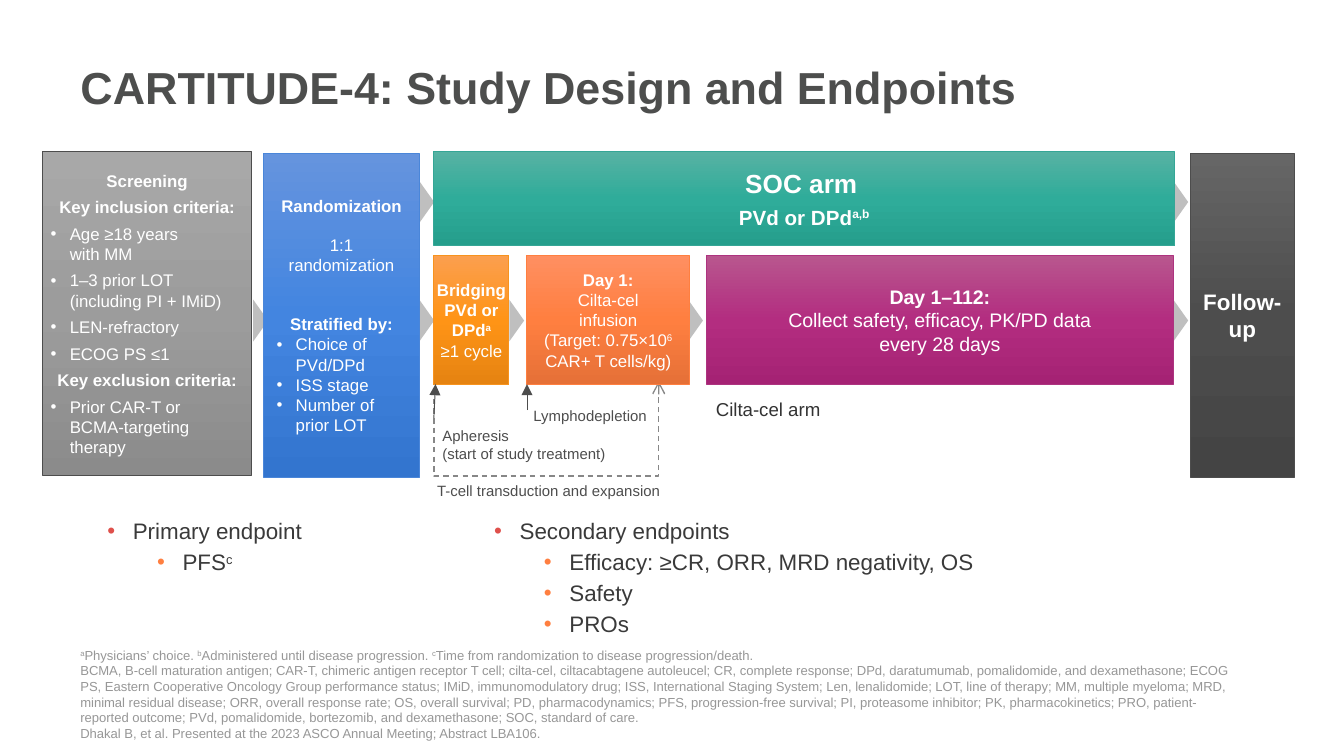
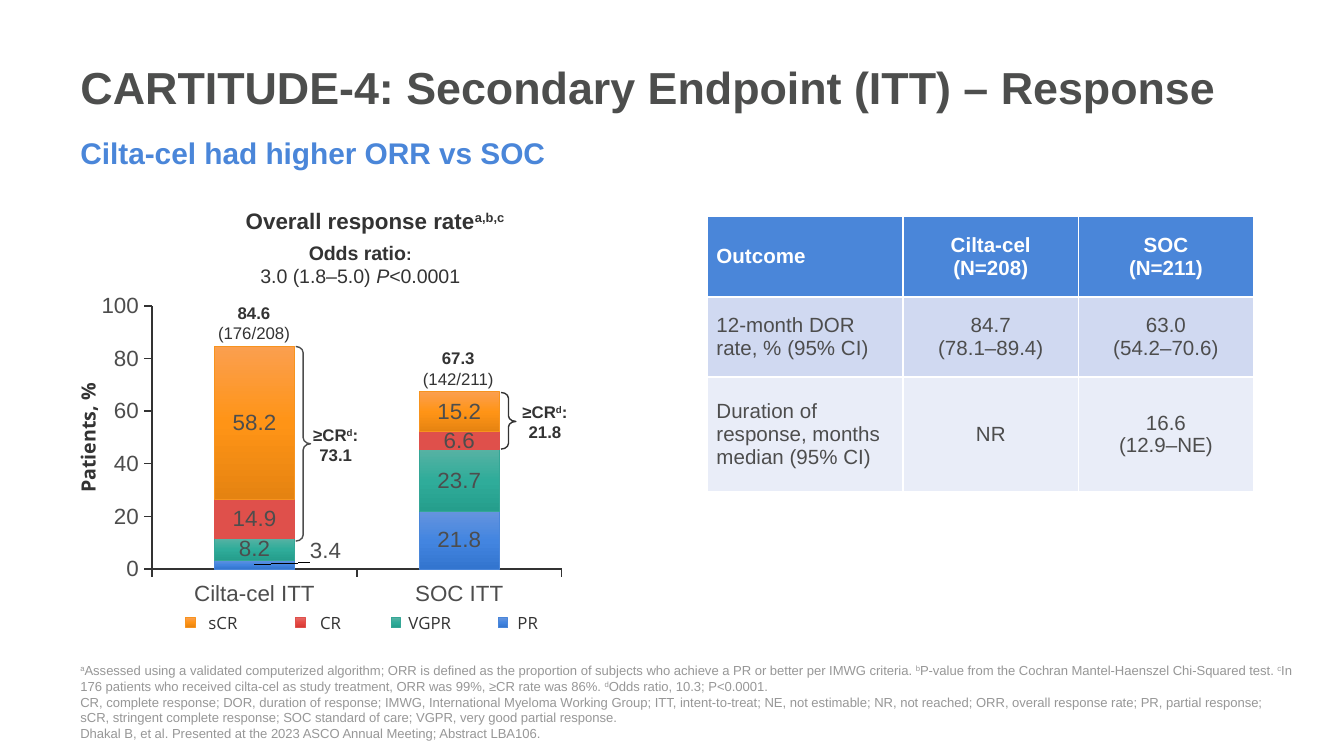
from copy import deepcopy
from lxml import etree
from pptx import Presentation
from pptx import util as u
from pptx.chart import data
from pptx.dml import color
from pptx.enum import chart as charts, dml, shapes, text
from pptx.oxml import ns

COLOURS = {
    "title": "4D4E4D", "slate": "4D4D4D", "ink": "333333", "list": "3A3A3A",
    "note": "979797", "white": "FFFFFF", "arrow": "BFBFBF", "dash": "878787",
    "accent": "4A86D9", "first bullet": "DF504B", "second bullet": "FF7F40",
    "odd row": "D0D9F1", "even row": "E9EDF8",
    "grey": "A8A8A8 9C9C9C 8B8B8B 4D4D4D", "dark": "666666 4D4D4D 444444 4D4D4D",
    "blue": "6594DE 4385E0 3375CF 4A86D9", "green": "57B2A3 2FAC9A 259E8C 35A696",
    "amber": "FB9F4F FF9416 E58311 F7931E", "orange": "FF8F61 FF7F40 E57037 FF7F40",
    "purple": "B8568E B32D80 A52274 AD337F", "red": "E46966 E64944 D53934 DF504B",
    "coral": "DF504B DF504B",
}
RGB = {name: color.RGBColor.from_string(code.split()[0]) for name, code in COLOURS.items()}
CENTER, LEFT = text.PP_ALIGN.CENTER, text.PP_ALIGN.LEFT
TOP, MIDDLE, BOTTOM = text.MSO_ANCHOR.TOP, text.MSO_ANCHOR.MIDDLE, text.MSO_ANCHOR.BOTTOM
TEXT = {"size": 9, "bold": False, "name": "Arial", "colour": "ink", "align": LEFT,
        "anchor": MIDDLE, "insets": (0.25, 0.13, 0.25, 0.13), "before": 0, "after": 0,
        "level": 0, "bullet": None, "mid": ("baseline", "30000")}
FLUSH = (0, 0, 0, 0)


def write(frame, lines, **style):
    base = {**TEXT, **style}
    left, top, right, bottom = map(u.Cm, base["insets"])
    for key, value in {"word_wrap": True, "auto_size": text.MSO_AUTO_SIZE.NONE,
                       "vertical_anchor": base["anchor"], "margin_left": left,
                       "margin_top": top, "margin_right": right,
                       "margin_bottom": bottom}.items():
        setattr(frame, key, value)
    for number, line in enumerate(lines):
        words, change = line if isinstance(line, tuple) else (line, {})
        look = {**base, **change}
        para = frame.add_paragraph() if number else frame.paragraphs[0]
        props = para._p.get_or_add_pPr()
        indent, hang, dot = look["bullet"] or (0, 0, None)
        props.set("marL", str(u.Cm(indent)))
        props.set("indent", str(-u.Cm(hang)))
        if look["bullet"]:
            paint_dot = etree.SubElement(props, ns.qn("a:buClr"))
            etree.SubElement(paint_dot, ns.qn("a:srgbClr"), val=COLOURS[dot])
            etree.SubElement(props, ns.qn("a:buFont"), typeface="Arial")
            etree.SubElement(props, ns.qn("a:buChar"), char="•")
        else:
            etree.SubElement(props, ns.qn("a:buNone"))
        for key, value in {"alignment": look["align"], "level": look["level"],
                           "space_before": u.Pt(look["before"] if number else 0),
                           "space_after": u.Pt(look["after"])}.items():
            setattr(para, key, value)
        for index, piece in enumerate(words.split("^")):
            for row, chunk in enumerate(piece.split("\n") if piece else []):
                if row:
                    para.add_line_break()
                    para._p[-1].append(deepcopy(run._r.rPr))
                run = para.add_run()
                run.text = chunk
                for key, value in {"size": u.Pt(look["size"]), "bold": look["bold"],
                                   "name": look["name"]}.items():
                    setattr(run.font, key, value)
                run.font.color.rgb = RGB[look["colour"]]
                if index % 2:
                    run._r.rPr.set(*look["mid"])


def paint(part, name):
    *stops, edge = COLOURS[name].split()
    fill = part.fill
    if len(stops) == 1:
        fill.solid()
        fill.fore_color.rgb = RGB[name]
    else:
        fill.gradient()
        fill.gradient_angle = 270
        ramp = fill._xPr.find(".//" + ns.qn("a:gsLst"))
        ramp.append(deepcopy(ramp[-1]))
        for stop, position, code in zip(fill.gradient_stops, (0, 0.5, 1), stops):
            stop.position = position
            stop.color.rgb = color.RGBColor.from_string(code)
    part.line.color.rgb = color.RGBColor.from_string(edge)
    part.line.width = u.Pt(0.5)


deck = Presentation()
deck.slide_width, deck.slide_height = u.Cm(25.4), u.Cm(14.29)

SOURCE = "Dhakal B, et al. Presented at the 2023 ASCO Annual Meeting; Abstract LBA106."
pages = []
for layout, title, note_width, notes in (
    (3, "CARTITUDE-4: Study Design and Endpoints", 22.38, [
        "^a^Physicians’ choice. ^b^Administered until disease progression. ^c^Time from randomization to disease progression/death.",
        "BCMA, B-cell maturation antigen; CAR-T, chimeric antigen receptor T cell; cilta-cel, ciltacabtagene autoleucel; CR, complete response; DPd, daratumumab, pomalidomide, and dexamethasone; ECOG PS, Eastern Cooperative Oncology Group performance status; IMiD, immunomodulatory drug; ISS, International Staging System; Len, lenalidomide; LOT, line of therapy; MM, multiple myeloma; MRD, minimal residual disease; ORR, overall response rate; OS, overall survival; PD, pharmacodynamics; PFS, progression-free survival; PI, proteasome inhibitor; PK, pharmacokinetics; PRO, patient-reported outcome; PVd, pomalidomide, bortezomib, and dexamethasone; SOC, standard of care."]),
    (1, "CARTITUDE-4: Secondary Endpoint (ITT) – Response", 23.42, [
        "^a^Assessed using a validated computerized algorithm; ORR is defined as the proportion of subjects who achieve a PR or better per IMWG criteria. ^b^P-value from the Cochran Mantel-Haenszel Chi-Squared test. ^c^In 176 patients who received cilta-cel as study treatment, ORR was 99%, ≥CR rate was 86%. ^d^Odds ratio, 10.3; P<0.0001.",
        "CR, complete response; DOR, duration of response; IMWG, International Myeloma Working Group; ITT, intent-to-treat; NE, not estimable; NR, not reached; ORR, overall response rate; PR, partial response; sCR, stringent complete response; SOC standard of care; VGPR, very good partial response."]),
):
    page = deck.slides.add_slide(deck.slide_layouts[layout])
    heading = page.shapes.title
    for key, value in zip(("left", "top", "width", "height"), (1.27, 0.41, 22.38, 2.46)):
        setattr(heading, key, u.Cm(value))
    write(heading.text_frame, [title], size=24, bold=True, colour="title")
    footnote = page.shapes.add_textbox(*map(u.Cm, (1.27, 13.23, note_width, 0.91)))
    write(footnote.text_frame, notes + [SOURCE], size=7, colour="note", anchor=BOTTOM)
    pages.append(page)
design, response = pages

first = {"size": 12, "colour": "list", "anchor": TOP, "before": 2.2,
         "bullet": (0.48, 0.48, "first bullet")}
second = {"level": 1, "bullet": (1.42, 0.48, "second bullet")}
bodies = (
    (design, 1, (1.78, 9.65, 4.39, 1.35), ["Primary endpoint", ("PFS^c^", second)], first),
    (design, 2, (9.09, 9.65, 11.56, 2.51),
     ["Secondary endpoints", ("Efficacy: ≥CR, ORR, MRD negativity, OS", second),
      ("Safety", second), ("PROs", second)], first),
    (response, 1, (1.27, 2.41, 22.38, 1.12), ["Cilta-cel had higher ORR vs SOC"],
     {"size": 16, "bold": True, "colour": "accent", "anchor": TOP}),
)
for page, slot, place, lines, style in bodies:
    body = page.placeholders[slot]
    for key, value in zip(("left", "top", "width", "height"), place):
        setattr(body, key, u.Cm(value))
    write(body.text_frame, lines, **style)

path_start, *path_turns = [(u.Cm(x), u.Cm(y)) for x, y in
                           ((8.2, 6.63), (8.2, 9), (12.45, 9), (12.45, 7.21))]
builder = design.shapes.build_freeform(*path_start, scale=1.0)
builder.add_line_segments(path_turns, close=False)
expansion = builder.convert_to_shape()
expansion.shadow.inherit = False
expansion.fill.background()
expansion.line.color.rgb = RGB["dash"]
expansion.line.width = u.Pt(0.75)
expansion.line.dash_style = dml.MSO_LINE.DASH
etree.SubElement(expansion._element.find(".//" + ns.qn("a:ln")), ns.qn("a:tailEnd"), type="arrow")

for left, top in ((7.67, 3.68), (21.92, 3.68), (4.53, 5.92), (7.67, 5.92),
                  (9.37, 5.92), (12.75, 5.92), (21.92, 5.92)):
    step = design.shapes.add_shape(shapes.MSO_SHAPE.ISOSCELES_TRIANGLE,
                                   *map(u.Cm, (left, top, 0.79, 0.28)))
    step.rotation = 90
    step.shadow.inherit = False
    step.fill.solid()
    step.fill.fore_color.rgb = RGB["arrow"]
    step.line.fill.background()

strong, plain = {"bold": True}, {"bold": False}
item = {"align": LEFT, "bullet": (0.36, 0.36, "white")}
phases = (
    ((22.5, 2.9, 1.96, 6.12), "dark", [("Follow-up", strong)],
     {"size": 12, "insets": (0.18, 0, 0.18, 0)}),
    ((0.81, 2.87, 3.94, 6.12), "grey",
     [("Screening", strong), ("Key inclusion criteria:", strong),
      ("Age ≥18 years\nwith MM", item), ("1–3 prior LOT (including PI + IMiD)", item),
      ("LEN-refractory", item), ("ECOG PS ≤1", item), ("Key exclusion criteria:", strong),
      ("Prior CAR-T or\nBCMA-targeting therapy", item)],
     {"after": 3.4, "insets": (0.15, 0.08, 0.15, 0.08)}),
    ((4.98, 2.9, 2.95, 6.12), "blue",
     [("Randomization", strong), ("1:1 randomization", {"before": 10.35}),
      ("Stratified by:", {"bold": True, "before": 20.7}),
      ("Choice of PVd/DPd", item), ("ISS stage", item), ("Number of prior LOT", item)], {}),
    ((9.96, 4.83, 3.07, 2.44), "orange",
     [("Day 1:", strong), "Cilta-cel\ninfusion", "(Target: 0.75×10^6^", "CAR+ T cells/kg)"],
     {"insets": FLUSH}),
    ((13.36, 4.83, 8.81, 2.44), "purple",
     [("Day 1–112:", strong), "Collect safety, efficacy, PK/PD data\nevery 28 days"],
     {"size": 10.5, "insets": FLUSH}),
    ((8.2, 4.83, 1.42, 2.44), "amber",
     [("Bridging", strong), ("PVd or DPd^a^", strong), "≥1 cycle"], {"insets": FLUSH}),
    ((8.2, 2.87, 14, 1.78), "green", [("PVd or DPd^a,b^", strong)],
     {"size": 11, "insets": (0.15, 0.76, 0.15, 0.08)}),
)
for place, colour, lines, style in phases:
    phase = design.shapes.add_shape(shapes.MSO_SHAPE.RECTANGLE, *map(u.Cm, place))
    phase.shadow.inherit = False
    paint(phase, colour)
    write(phase.text_frame, lines, colour="white", align=CENTER, **style)

for start, end in (((8.2, 7.9), (8.23, 7.26)), ((9.96, 7.75), (9.96, 7.26))):
    pointer = design.shapes.add_connector(shapes.MSO_CONNECTOR.STRAIGHT,
                                          *map(u.Cm, start + end))
    pointer.line.color.rgb = RGB["slate"]
    pointer.line.width = u.Pt(0.5)
    etree.SubElement(pointer._element.find(".//" + ns.qn("a:ln")), ns.qn("a:tailEnd"), type="triangle")
    etree.SubElement(pointer._element.spPr, ns.qn("a:effectLst"))

GRADES = (("PR", "blue", (3.4, 21.8), 9.42, 9.78), ("VGPR", "green", (8.2, 23.7), 7.39, 7.72),
          ("CR", "coral", (14.9, 6.6), 5.59, 6.05), ("sCR", "amber", (58.2, 15.2), 3.51, 3.94))
rates = data.CategoryChartData(number_format="0.0")
rates.categories = ["Cilta-cel ITT", "SOC ITT"]
for grade, colour, values, *_ in GRADES:
    rates.add_series(grade, values)
chart = response.shapes.add_chart(charts.XL_CHART_TYPE.COLUMN_STACKED,
                                  *map(u.Cm, (1.68, 5.56, 9.12, 5.89)), rates).chart
for key, value in {"has_legend": False, "has_title": False}.items():
    setattr(chart, key, value)
bars = chart.plots[0]
for key, value in {"gap_width": 156, "overlap": 100, "vary_by_categories": False}.items():
    setattr(bars, key, value)
for key, value in {"minimum_scale": 0, "maximum_scale": 100, "major_unit": 20,
                   "has_major_gridlines": False}.items():
    setattr(chart.value_axis, key, value)
chart.value_axis.tick_labels.number_format = "0"
chart.value_axis.tick_labels.number_format_is_linked = False
for axis in (chart.category_axis, chart.value_axis):
    axis.major_tick_mark = charts.XL_TICK_MARK.OUTSIDE
    axis.minor_tick_mark = charts.XL_TICK_MARK.NONE
    axis.format.line.color.rgb = RGB["ink"]
    axis.format.line.width = u.Pt(0.75)
for series, (grade, colour, *_) in zip(bars.series, GRADES):
    paint(series.format, colour)
    labels = series.data_labels
    for key, value in {"show_value": True, "position": charts.XL_LABEL_POSITION.CENTER,
                       "number_format": "0.0", "number_format_is_linked": False}.items():
        setattr(labels, key, value)
smallest = bars.series[0].points[0].data_label
smallest.position = charts.XL_LABEL_POSITION.CENTER
for font in (chart.font, chart.category_axis.tick_labels.font, smallest.font,
             chart.value_axis.tick_labels.font, *(s.data_labels.font for s in bars.series)):
    font.size, font.name = u.Pt(12), "Arial"
    font.color.rgb = RGB["slate"]

plot_area = chart._chartSpace.find(".//" + ns.qn("c:plotArea"))
for old in plot_area.findall(ns.qn("c:layout")):
    plot_area.remove(old)
small_label = chart._chartSpace.find(".//" + ns.qn("c:dLbl"))
for owner, spot, settings in (
    (plot_area, 0, {"layoutTarget": "inner", "xMode": "edge", "yMode": "edge",
                    "x": 0.131, "y": 0.033, "w": 0.849, "h": 0.855}),
    (small_label, 1, {"x": 0.147, "y": -0.045}),
):
    layout = etree.Element(ns.qn("c:layout"))
    manual = etree.SubElement(layout, ns.qn("c:manualLayout"))
    for key, value in settings.items():
        etree.SubElement(manual, ns.qn("c:" + key), val=str(value))
    owner.insert(spot, layout)

for grade, colour, values, swatch_left, name_left in GRADES:
    swatch = response.shapes.add_shape(shapes.MSO_SHAPE.RECTANGLE,
                                       *map(u.Cm, (swatch_left, 11.68, 0.18, 0.18)))
    swatch.shadow.inherit = False
    paint(swatch, "red" if grade == "CR" else colour)
    key_name = response.shapes.add_textbox(*map(u.Cm, (name_left, 11.58, 1.02, 0.38)))
    write(key_name.text_frame, [grade], name="Open Sans", insets=FLUSH, anchor=TOP)

for place, bend, colour in (((9.47, 7.42, 0.28, 1.07), (0.377, 0.511), "ink"),
                            ((5.59, 6.55, 0.28, 3.68), (0.418, 0.5), "slate")):
    brace = response.shapes.add_shape(shapes.MSO_SHAPE.RIGHT_BRACE, *map(u.Cm, place))
    brace.shadow.inherit = False
    brace.fill.background()
    brace.line.color.rgb = RGB[colour]
    brace.line.width = u.Pt(0.75)
    brace.adjustments[0], brace.adjustments[1] = bend

small = {"size": 8, "colour": "slate", "insets": FLUSH}
count = {"align": CENTER, "anchor": TOP}
complete = {**count, "bold": True, "insets": FLUSH}
captions = (
    (design, (8.2, 3.3, 13.89, 0.33), ["SOC arm"],
     {"size": 14, "bold": True, "colour": "white", "align": CENTER}),
    (design, (13.28, 7.44, 6.68, 0.58), ["Cilta-cel arm"], {"size": 10}),
    (design, (8.36, 8.03, 3.45, 0.76), ["Apheresis\n(start of study treatment)"], small),
    (design, (10.08, 7.34, 2.34, 1.04), ["Lymphodepletion"], small),
    (design, (8.26, 8.76, 4.29, 1.04), ["T-cell transduction and expansion"], small),
    (response, (3.71, 5.59, 2.18, 1.02), [("84.6", strong), "(176/208)"], count),
    (response, (7.57, 6.45, 2.18, 1.02), [("67.3", strong), "(142/211)"], count),
    (response, (5.89, 8.03, 0.91, 0.76), ["≥CR^d^:", "73.1"], complete),
    (response, (9.78, 7.59, 1.04, 0.76), ["≥CR^d^:", "21.8"], complete),
    (response, (3.84, 3.78, 6.5, 0.74), ["Overall response rate^a,b,c^"],
     {**count, "size": 12, "bold": True}),
    (response, (4.22, 4.42, 5.18, 1.14),
     [("Odds ratio^:^", {"bold": True, "mid": ("sz", "900")}),
      ("3.0 (1.8–5.0) ^P^<0.0001", {"mid": ("i", "1")})], {**count, "size": 10.5}),
    (response, (0.13, 7.92, 3.07, 0.71), ["Patients, %"],
     {**count, "size": 10.5, "bold": True, "name": "Open Sans", "rotation": 270}),
)
for page, place, lines, style in captions:
    caption = page.shapes.add_textbox(*map(u.Cm, place))
    caption.rotation = style.get("rotation", 0)
    write(caption.text_frame, lines, **style)

OUTCOMES = (
    (["Outcome"], ["Cilta-cel", "(N=208)"], ["SOC", "(N=211)"]),
    (["12-month DOR rate, % (95% CI)"], ["84.7", "(78.1–89.4)"], ["63.0", "(54.2–70.6)"]),
    (["Duration of response, months median (95% CI)"], ["NR"], ["16.6", "(12.9–NE)"]),
)
outcomes = response.shapes.add_table(3, 3, *map(u.Cm, (13.36, 4.09, 10.33, 5.2))).table
outcomes.horz_banding = False
for column, width in zip(outcomes.columns, (3.71, 3.31, 3.31)):
    column.width = u.Cm(width)
for row, height, entries, shade in zip(outcomes.rows, (1.52, 1.52, 2.16), OUTCOMES,
                                       ("accent", "odd row", "even row")):
    row.height = u.Cm(height)
    header = shade == "accent"
    for index, (cell, lines) in enumerate(zip(row.cells, entries)):
        for edge in "LRTB":
            border = etree.SubElement(cell._tc.get_or_add_tcPr(), ns.qn("a:ln" + edge), w="12700")
            border_fill = etree.SubElement(border, ns.qn("a:solidFill"))
            etree.SubElement(border_fill, ns.qn("a:srgbClr"), val=COLOURS["white"])
        cell.fill.solid()
        cell.fill.fore_color.rgb = RGB[shade]
        for key, value in {"vertical_anchor": MIDDLE, "margin_left": u.Cm(0.18),
                           "margin_right": u.Cm(0.18), "margin_top": u.Cm(0.1),
                           "margin_bottom": u.Cm(0.1)}.items():
            setattr(cell, key, value)
        write(cell.text_frame, lines, size=11, bold=header,
              colour="white" if header else "slate", align=CENTER if index else LEFT)

deck.save("out.pptx")
